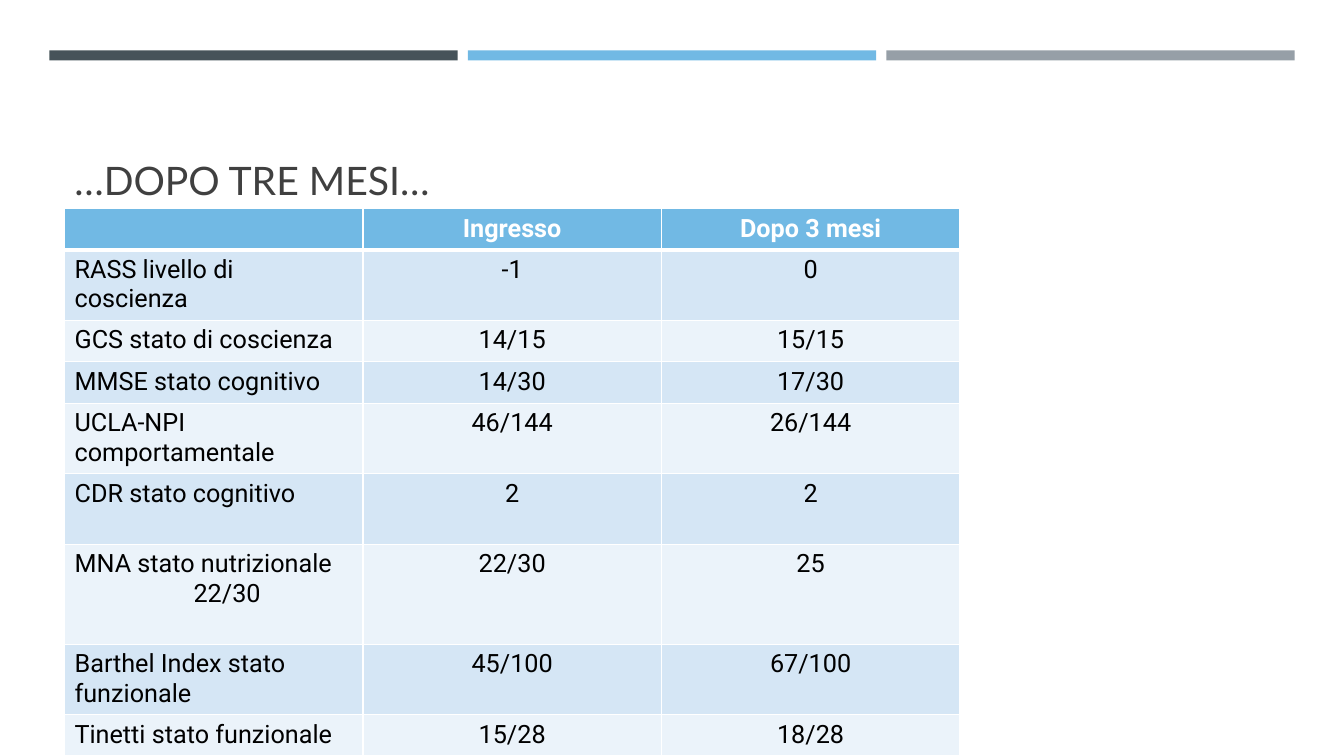
"""Slide comparing clinical scores at admission and after three months."""
from lxml import etree
from pptx import Presentation
from pptx.dml.color import RGBColor
from pptx.enum.shapes import MSO_SHAPE
from pptx.enum.text import MSO_ANCHOR, PP_ALIGN
from pptx.oxml.ns import qn
from pptx.util import Inches, Pt

RECT = MSO_SHAPE.RECTANGLE
BOTTOM = MSO_ANCHOR.BOTTOM
LEFT, CENTER = PP_ALIGN.LEFT, PP_ALIGN.CENTER

COLORS = {
    "slate": "465359", "blue": "71B9E4", "gray": "969FA7", "title": "404040",
    "band": "D5E6F5", "light": "EBF3FA", "white": "FFFFFF", "black": "000000",
}
MARGIN, BAR_W, BAR_STEP = 0.49, 4.05, 4.15
TABLE_X, TABLE_Y, COL_W = 0.64, 2.07, 2.96
LINE_H, ROW_PAD = 0.29, 0.12
SCORES = [
    (1, [""], "Ingresso", "Dopo 3 mesi"),
    (2, ["RASS livello di coscienza"], "-1", "0"),
    (1, ["GCS stato di coscienza"], "14/15", "15/15"),
    (1, ["MMSE stato cognitivo"], "14/30", "17/30"),
    (2, ["UCLA-NPI comportamentale"], "46/144", "26/144"),
    (2, ["CDR stato cognitivo"], "2", "2"),
    (3, ["MNA stato nutrizionale", "22/30"], "22/30", "25"),
    (2, ["Barthel Index stato funzionale"], "45/100", "67/100"),
    (1, ["Tinetti stato funzionale"], "15/28", "18/28"),
]


def add_run(p, text, font, size, color, bold=False):
    r = p.add_run()
    r.text = text
    r.font.name, r.font.size, r.font.bold = font, Pt(size), bold
    r.font.color.rgb = RGBColor.from_string(COLORS[color])


def add_border(cell, side, width):
    ln = etree.SubElement(cell._tc.get_or_add_tcPr(), qn(f"a:ln{side}"), w=str(Pt(width)))
    fill = etree.SubElement(ln, qn("a:solidFill"))
    etree.SubElement(fill, qn("a:srgbClr"), val=COLORS["white"])


prs = Presentation()
prs.slide_width, prs.slide_height = Inches(13.33), Inches(7.5)
s = prs.slides.add_slide(prs.slide_layouts[6])

for i, color in enumerate(["slate", "blue", "gray"]):
    sp = s.shapes.add_shape(RECT, Inches(MARGIN + i * BAR_STEP), Inches(0.5),
                            Inches(BAR_W), Inches(0.1))
    sp.shadow.inherit = False
    sp.fill.solid()
    sp.fill.fore_color.rgb = RGBColor.from_string(COLORS[color])
    sp.line.fill.background()

tf = s.shapes.add_textbox(Inches(TABLE_X), Inches(0.77), Inches(12.06), Inches(1.3)).text_frame
tf.word_wrap = True
tf.vertical_anchor = BOTTOM
add_run(tf.paragraphs[0], "…DOPO TRE MESI…", "Lato", 28, "title")

heights = [Inches(ROW_PAD + row[0] * LINE_H) for row in SCORES]
table = s.shapes.add_table(len(SCORES), 3, Inches(TABLE_X), Inches(TABLE_Y),
                           Inches(3 * COL_W), sum(heights)).table
for col in table.columns:
    col.width = Inches(COL_W)

for i, (lines, labels, before, after) in enumerate(SCORES):
    table.rows[i].height = heights[i]
    header = i == 0
    fill = "blue" if header else "band" if i % 2 else "light"
    for j, texts in enumerate([labels, [before], [after]]):
        cell = table.cell(i, j)
        for side in "LRTB":
            thick = (header and side == "B") or (i == 1 and side == "T")
            add_border(cell, side, 3 if thick else 1)
        cell.fill.solid()
        cell.fill.fore_color.rgb = RGBColor.from_string(COLORS[fill])
        tf = cell.text_frame
        for k, text in enumerate(texts):
            p = tf.add_paragraph() if k else tf.paragraphs[0]
            p.alignment = CENTER if j else LEFT
            if k:
                p._p.get_or_add_pPr().set("marL", str(Inches(1.18)))
            if text:
                add_run(p, text, "Roboto", 18, "white" if header else "black", header)

prs.save("out.pptx")
